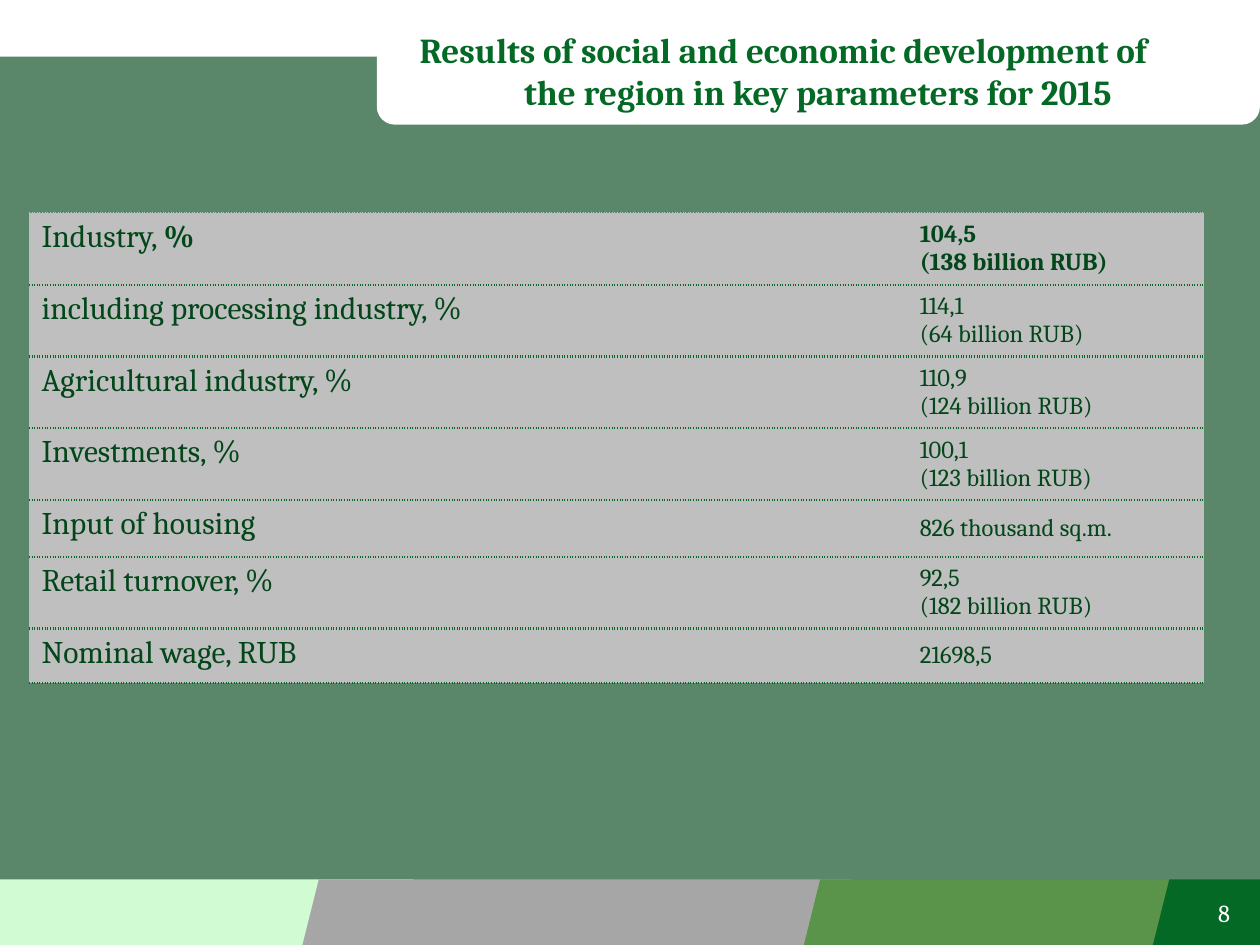
from lxml import etree
from pptx import Presentation
from pptx.dml.color import RGBColor
from pptx.enum import shapes, text
from pptx.oxml import ns
from pptx.util import Inches, Pt

FONT = "Cambria"
WHITE = RGBColor(0xFF, 0xFF, 0xFF)
GREEN = RGBColor(0x05, 0x69, 0x26)
DARK_GREEN = RGBColor(0x03, 0x46, 0x1A)
LEAF = RGBColor(0x5A, 0x94, 0x4A)
MINT = RGBColor(0xD1, 0xFB, 0xD3)
GREY = RGBColor(0xA6, 0xA6, 0xA6)
CELL_GREY = RGBColor(0xBF, 0xBF, 0xBF)

TITLE = "Results of social and economic development of the region in key parameters for 2015"
PAGE = "8"
# label, value lines, row height
ROWS = [
    ("Industry, %", ["104,5", "(138 billion RUB)"], 0.57),
    ("including processing industry, %", ["114,1", "(64 billion RUB)"], 0.57),
    ("Agricultural industry, %", ["110,9", "(124 billion RUB)"], 0.57),
    ("Investments, %", ["100,1", "(123 billion RUB)"], 0.57),
    ("Input of housing", ["826 thousand sq.m."], 0.45),
    ("Retail turnover, %", ["92,5", "(182 billion RUB)"], 0.57),
    ("Nominal wage, RUB", ["21698,5"], 0.43),
]
COLUMNS = [6.97, 2.36]
# left, width, colour
FOOTER = [(-0.2, 3.48, MINT), (2.4, 4.35, GREY), (6.38, 3.77, LEAF), (9.15, 0.98, GREEN)]


def box(x, y, w, h):
    return [Inches(v) for v in (x, y, w, h)]


def add_block(s, kind, place, color):
    sp = s.shapes.add_shape(kind, *box(*place))
    sp.shadow.inherit = False
    sp.fill.solid()
    sp.fill.fore_color.rgb = color
    sp.line.fill.background()
    return sp


def set_font(p, size, color, bold=False):
    p.font.name = FONT
    p.font.size = Pt(size)
    p.font.color.rgb = color
    p.font.bold = bold


def add_border(cell, side, color=None):
    """Draw a dotted border, or hide it when there is no colour."""
    ln = etree.SubElement(cell._tc.get_or_add_tcPr(), ns.qn("a:" + side), w=str(Pt(1.5)))
    if color is None:
        etree.SubElement(ln, ns.qn("a:noFill"))
        return
    fill = etree.SubElement(ln, ns.qn("a:solidFill"))
    etree.SubElement(fill, ns.qn("a:srgbClr"), val=str(color))
    etree.SubElement(ln, ns.qn("a:prstDash"), val="sysDot")


def add_title(s):
    title = s.shapes.title
    title.left, title.top, title.width, title.height = box(2.99, 0.13, 6.4, 0.86)
    tf = title.text_frame
    tf.text = TITLE
    tf.word_wrap = True
    tf.auto_size = text.MSO_AUTO_SIZE.NONE
    tf.vertical_anchor = text.MSO_ANCHOR.MIDDLE
    p = tf.paragraphs[0]
    p.alignment = text.PP_ALIGN.LEFT
    pPr = p._p.get_or_add_pPr()
    pPr.set("marL", str(Inches(1.07)))
    pPr.set("indent", str(Inches(-0.83)))
    set_font(p, 20, GREEN, True)


def add_results(s):
    height = sum(row[2] for row in ROWS)
    table = s.shapes.add_table(
        len(ROWS), len(COLUMNS), *box(0.23, 1.69, sum(COLUMNS), height)).table
    table.first_row = table.horz_banding = False
    for column, width in zip(table.columns, COLUMNS):
        column.width = Inches(width)
    for i, (label, values, row_height) in enumerate(ROWS):
        table.rows[i].height = Inches(row_height)
        label_cell, value_cell = table.rows[i].cells
        for cell in (label_cell, value_cell):
            add_border(cell, "lnL")
            add_border(cell, "lnR")
            add_border(cell, "lnT", GREEN if i else CELL_GREY)
            add_border(cell, "lnB", GREEN)
            cell.fill.solid()
            cell.fill.fore_color.rgb = CELL_GREY
        p = label_cell.text_frame.paragraphs[0]
        if i == 0:
            p.add_run().text = label[:-1]
            percent = p.add_run()
            percent.text = label[-1]
            percent.font.bold = True
        else:
            p.add_run().text = label
        set_font(p, 18, DARK_GREEN)
        value_cell.vertical_anchor = text.MSO_ANCHOR.MIDDLE
        value_cell.text_frame.text = "\n".join(values)
        for p in value_cell.text_frame.paragraphs:
            set_font(p, 14, DARK_GREEN, i == 0)


def add_footer(s):
    for left, width, color in FOOTER:
        add_block(s, shapes.MSO_SHAPE.PARALLELOGRAM, (left, 6.98, width, 0.52), color)
    tf = s.shapes.add_textbox(*box(9.46, 7.01, 0.4, 0.4)).text_frame
    tf.word_wrap = True
    tf.vertical_anchor = text.MSO_ANCHOR.BOTTOM
    tf.text = PAGE
    p = tf.paragraphs[0]
    p.alignment = text.PP_ALIGN.RIGHT
    set_font(p, 14, WHITE)


def main():
    prs = Presentation()
    prs.slide_width, prs.slide_height = Inches(10), Inches(7.5)
    s = prs.slides.add_slide(prs.slide_layouts[5])
    backdrop = add_block(s, shapes.MSO_SHAPE.RECTANGLE, (0, 0.45, 10, 6.57), DARK_GREEN)
    color = backdrop.fill._xPr.find(".//" + ns.qn("a:srgbClr"))
    etree.SubElement(color, ns.qn("a:alpha"), val="65000")
    add_block(s, shapes.MSO_SHAPE.ROUNDED_RECTANGLE, (2.99, 0.13, 7.01, 0.86), WHITE)
    # The title placeholder comes first by default; lift it above the panels.
    s.shapes._spTree.append(s.shapes.title._element)
    add_title(s)
    add_results(s)
    add_footer(s)
    prs.save("out.pptx")


if __name__ == "__main__":
    main()
